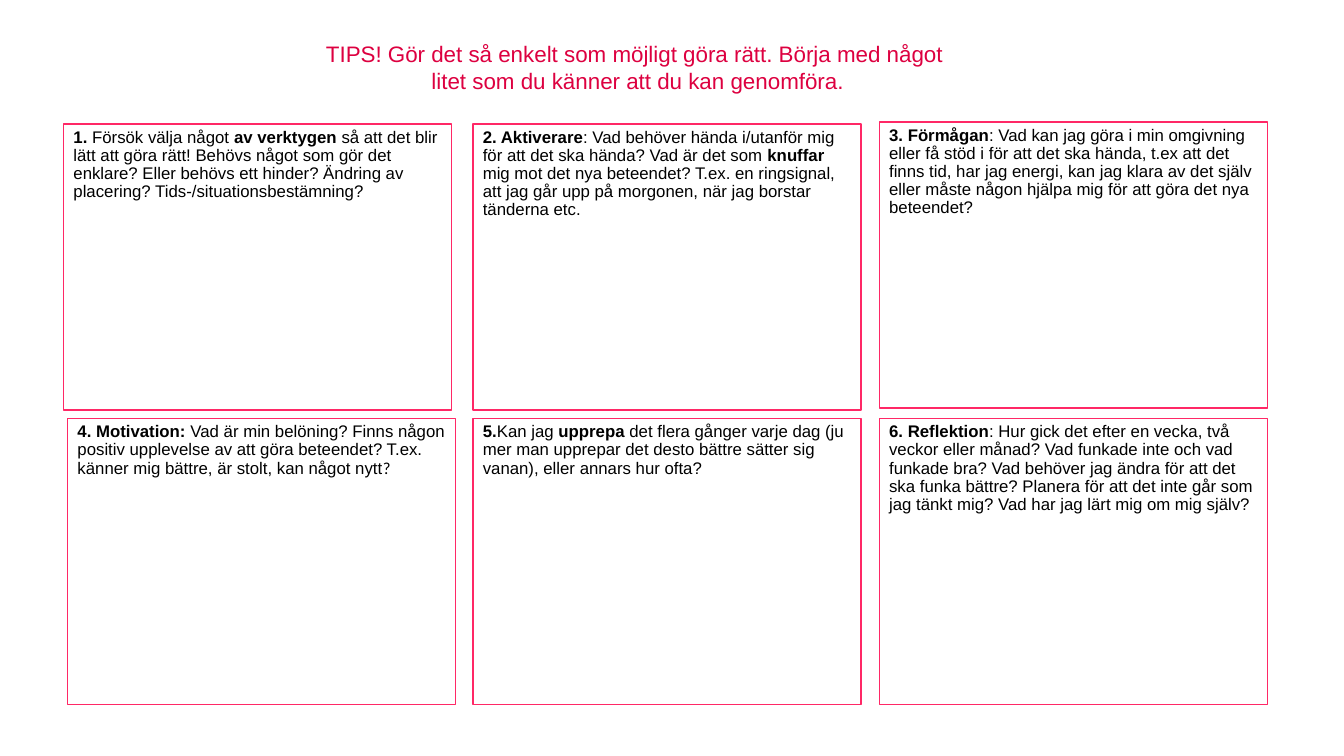
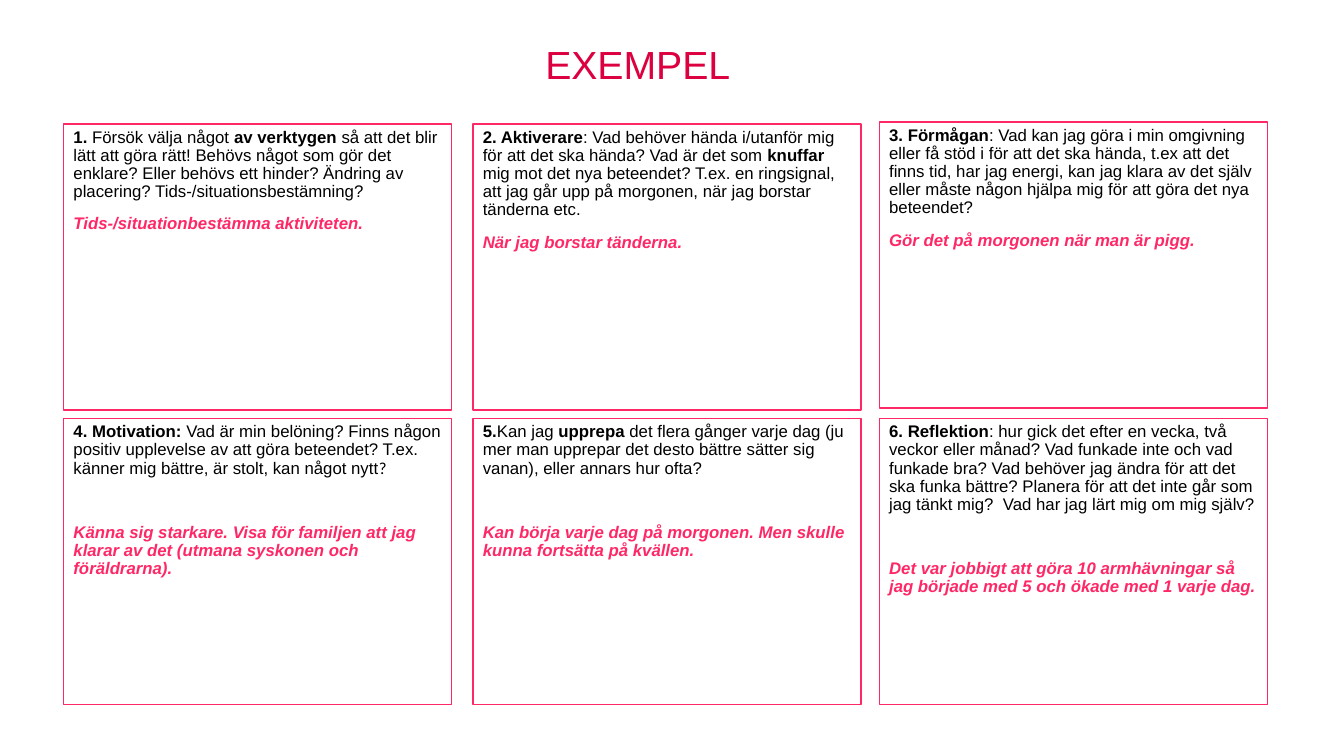
from dataclasses import dataclass, replace
from typing import NamedTuple

import pptx
import pptx.dml.color
import pptx.enum.shapes
import pptx.enum.text
import pptx.util

Inches = pptx.util.Inches
Pt = pptx.util.Pt

# Shared style
FONT = "Arial"
TITLE_COLOR = "DD0040"
BORDER = "FF2866"
ANSWER = "FF2867"
BLACK = "000000"
WHITE = "FFFFFF"

# Grid of panels
LEFTS = (0.63, 4.69, 8.72)
TOPS = (1.23, 4.15)
PANEL_W, PANEL_H = 3.85, 2.84
ANSWER_GAPS = (10, 33)  # points above the answer, by row


class Span(NamedTuple):
    text: str
    bold: bool = False
    font: str = FONT


@dataclass(frozen=True)
class Panel:
    row: int
    col: int
    question: tuple[Span, ...]
    dx: float = 0
    dy: float = 0


def rgb(color: str) -> pptx.dml.color.RGBColor:
    return pptx.dml.color.RGBColor.from_string(color)


def add_run(p, text: str, *, size: float = 12, color: str = BLACK,
            font: str = FONT, bold: bool = False, italic: bool = False) -> None:
    r = p.add_run()
    r.text = text
    r.font.name = font
    r.font.size = Pt(size)
    r.font.bold = bold
    r.font.italic = italic
    r.font.color.rgb = rgb(color)


def add_title(s, lines: tuple[str, ...], size: float, height: float) -> None:
    sp = s.shapes.add_textbox(Inches(2.13), Inches(0.35), Inches(8.39), Inches(height))
    tf = sp.text_frame
    tf.word_wrap = True
    p = tf.paragraphs[0]
    p.alignment = pptx.enum.text.PP_ALIGN.CENTER
    for i, line in enumerate(lines):
        if i:
            p.add_line_break()
        add_run(p, line, size=size, color=TITLE_COLOR)


def format_paragraph(p, space_before: float = 0) -> None:
    p.alignment = pptx.enum.text.PP_ALIGN.LEFT
    p.line_spacing = 0.9
    p.space_before = Pt(space_before)


def add_panel(s, panel: Panel, answer: str = "") -> None:
    sp = s.shapes.add_shape(
        pptx.enum.shapes.MSO_SHAPE.RECTANGLE,
        Inches(LEFTS[panel.col] + panel.dx), Inches(TOPS[panel.row] + panel.dy),
        Inches(PANEL_W), Inches(PANEL_H))
    sp.shadow.inherit = False
    sp.fill.solid()
    sp.fill.fore_color.rgb = rgb(WHITE)
    sp.line.color.rgb = rgb(BORDER)
    sp.line.width = Pt(1)
    tf = sp.text_frame
    tf.word_wrap = True
    tf.vertical_anchor = pptx.enum.text.MSO_ANCHOR.TOP
    p = tf.paragraphs[0]
    format_paragraph(p)
    for span in panel.question:
        add_run(p, span.text, bold=span.bold, font=span.font)
    if answer:
        p = tf.add_paragraph()
        format_paragraph(p, ANSWER_GAPS[panel.row])
        add_run(p, answer, color=ANSWER, bold=True, italic=True)


# Questions, in reading order
PANELS = (
    Panel(0, 0, (
        Span("1. ", True), Span("Försök välja något "), Span("av verktygen ", True),
        Span("så att det blir lätt att göra rätt! Behövs något som gör det enklare? "
             "Eller behövs ett hinder? Ändring av placering? "
             "Tids-/situationsbestämning?"))),
    Panel(0, 1, (
        Span("2. Aktiverare", True),
        Span(": Vad behöver hända i/utanför mig för att det ska hända? Vad är det som "),
        Span("knuffar ", True),
        Span("mig mot det nya beteendet? T.ex. en ringsignal, att jag går upp på "
             "morgonen, när jag borstar tänderna etc."))),
    Panel(0, 2, (
        Span("3. Förmågan", True),
        Span(": Vad kan jag göra i min omgivning eller få stöd i för att det ska hända, "
             "t.ex att det finns tid, har jag energi, kan jag klara av det själv eller "
             "måste någon hjälpa mig för att göra det nya beteendet?")), dy=-0.02),
    Panel(1, 0, (
        Span("4. Motivation: ", True),
        Span("Vad är min belöning? Finns någon positiv upplevelse av att göra beteendet? "
             "T.ex. känner mig bättre, är stolt, kan något nytt"),
        Span("?", font="Calibri"))),
    Panel(1, 1, (
        Span("5.", True), Span("Kan jag "), Span("upprepa", True),
        Span(" det flera gånger varje dag (ju mer man upprepar det desto bättre sätter "
             "sig vanan), eller annars hur ofta?"))),
    Panel(1, 2, (
        Span("6. Reflektion", True),
        Span(": Hur gick det efter en vecka, två veckor eller månad? Vad funkade inte och "
             "vad funkade bra? Vad behöver jag ändra för att det ska funka bättre? "
             "Planera för att det inte går som jag tänkt mig? "
             "Vad har jag lärt mig om mig själv?"))),
)

ANSWERS = (
    "Tids-/situationbestämma aktiviteten.",
    "När jag borstar tänderna.",
    "Gör det på morgonen när man är pigg.",
    "Känna sig starkare. Visa för familjen att jag klarar av det "
    "(utmana syskonen och föräldrarna).",
    "Kan börja varje dag på morgonen. Men skulle kunna fortsätta på kvällen.",
    "Det var jobbigt att göra 10 armhävningar så jag började med 5 "
    "och ökade med 1 varje dag.",
)


def build_tips(s) -> None:
    for panel in PANELS:
        # The motivation panel sits slightly to the right on this slide
        shifted = (panel.row, panel.col) == (1, 0)
        add_panel(s, replace(panel, dx=0.04) if shifted else panel)
    add_title(s, ("TIPS! Gör det så enkelt som möjligt göra rätt. Börja med något ",
                  "litet som du känner att du kan genomföra."), 16, 0.64)


def build_example(s) -> None:
    # The reflection question is worded in lower case with a wider last gap
    heading, body = PANELS[-1].question
    text = body.text.replace(": Hur", ": hur").replace("mig? Vad", "mig?  Vad")
    reflection = replace(PANELS[-1], question=(heading, Span(text)))
    for panel, answer in zip((*PANELS[:-1], reflection), ANSWERS):
        add_panel(s, panel, answer)
    add_title(s, ("EXEMPEL",), 28, 0.57)


def main() -> None:
    prs = pptx.Presentation()
    prs.slide_width = Inches(13.33)
    prs.slide_height = Inches(7.5)
    for build in (build_tips, build_example):
        build(prs.slides.add_slide(prs.slide_layouts[6]))
    prs.save("out.pptx")


if __name__ == "__main__":
    main()
